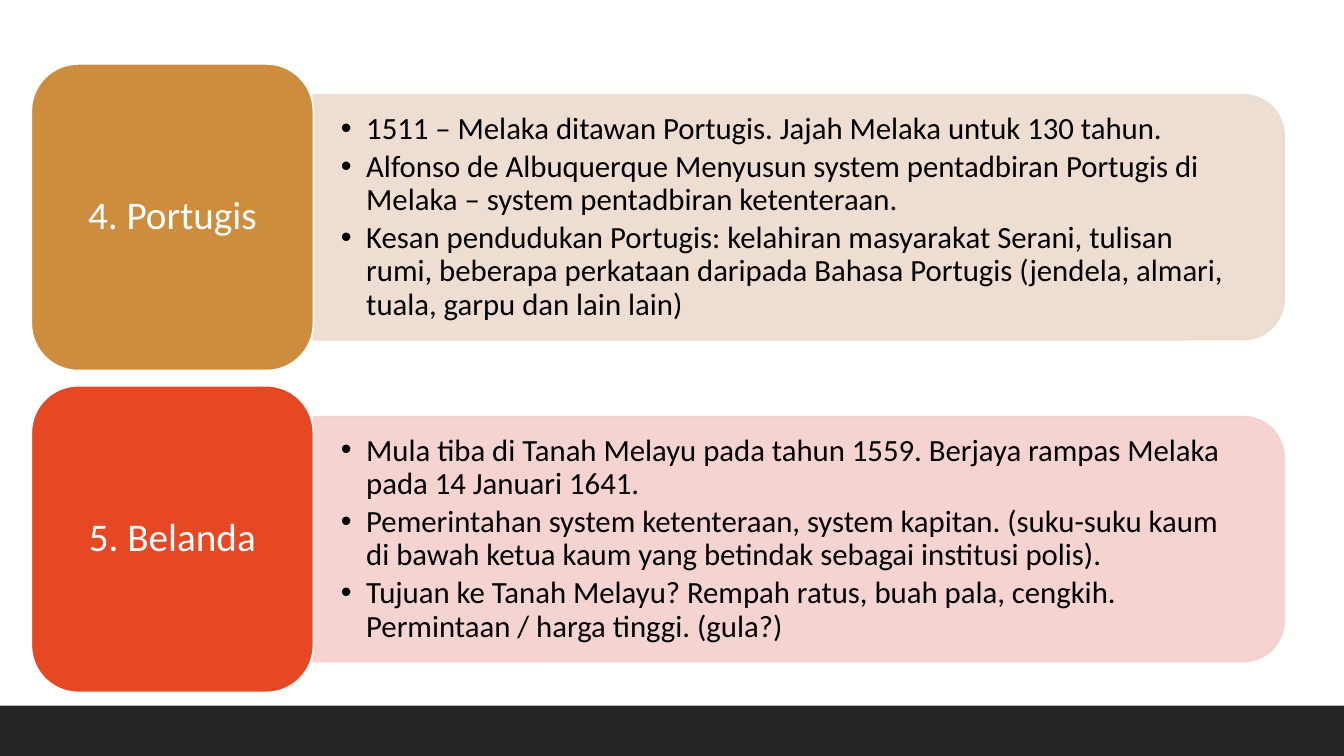
from dataclasses import dataclass

import pptx
import pptx.dml.color
import pptx.enum.shapes
import pptx.enum.text
import pptx.oxml
import pptx.oxml.ns
import pptx.util
from lxml import etree

Cm = pptx.util.Cm
Pt = pptx.util.Pt
RGBColor = pptx.dml.color.RGBColor
MSO_SHAPE = pptx.enum.shapes.MSO_SHAPE
MSO_ANCHOR = pptx.enum.text.MSO_ANCHOR
PP_ALIGN = pptx.enum.text.PP_ALIGN
qn = pptx.oxml.ns.qn

WHITE = RGBColor(0xFF, 0xFF, 0xFF)
BLACK = RGBColor(0x00, 0x00, 0x00)
CHARCOAL = RGBColor(0x26, 0x26, 0x26)
OCHRE = RGBColor(0xCE, 0x8D, 0x3E)
SAND = RGBColor(0xED, 0xDB, 0xCE)
RED = RGBColor(0xE6, 0x48, 0x23)
PINK = RGBColor(0xF5, 0xCF, 0xCD)

FONT = "Calibri"
SLIDE_W, SLIDE_H = Cm(33.87), Cm(19.05)
FOOTER_H = Cm(1.27)
CARD_LEFT, CARD_TOP = Cm(0.79), Cm(1.61)
CARD_W, CARD_H = Cm(7.11), Cm(7.73)
PANEL_W, PANEL_H = Cm(24.46), Cm(6.17)
NOTES_W, NOTES_H = Cm(24.16), Cm(5.56)
ROW_PITCH = Cm(8.11)
BULLET_INDENT = Cm(0.64)


@dataclass(frozen=True)
class Power:
    label: str
    color: RGBColor
    tint: RGBColor
    notes: tuple[str, ...]


POWERS = (
    Power("4. Portugis", OCHRE, SAND, (
        "1511 – Melaka ditawan Portugis. Jajah Melaka untuk 130 tahun.",
        "Alfonso de Albuquerque Menyusun system pentadbiran Portugis di Melaka – "
        "system pentadbiran ketenteraan.",
        "Kesan pendudukan Portugis: kelahiran masyarakat Serani, tulisan rumi, "
        "beberapa perkataan daripada Bahasa Portugis (jendela, almari, tuala, "
        "garpu dan lain lain)",
    )),
    Power("5. Belanda", RED, PINK, (
        "Mula tiba di Tanah Melayu pada tahun 1559. Berjaya rampas Melaka pada "
        "14 Januari 1641.",
        "Pemerintahan system ketenteraan, system kapitan. (suku-suku kaum di bawah "
        "ketua kaum yang betindak sebagai institusi polis).",
        "Tujuan ke Tanah Melayu? Rempah ratus, buah pala, cengkih. Permintaan / "
        "harga tinggi. (gula?)",
    )),
)


def add_block(slide, kind, left: int, top: int, width: int, height: int,
              fill: RGBColor, line: RGBColor | None = None):
    sp = slide.shapes.add_shape(kind, left, top, width, height)
    sp.shadow.inherit = False
    sp.fill.solid()
    sp.fill.fore_color.rgb = fill
    if line is None:
        sp.line.fill.background()
    else:
        sp.line.color.rgb = line
        sp.line.width = Pt(1.25)
    return sp


def set_margins(tf, horizontal: int, vertical: int) -> None:
    tf.margin_left = tf.margin_right = horizontal
    tf.margin_top = tf.margin_bottom = vertical
    tf.vertical_anchor = MSO_ANCHOR.MIDDLE
    tf.word_wrap = True


def format_paragraph(p, size: int, color: RGBColor) -> None:
    p.line_spacing = 0.9
    for r in p.runs:
        r.font.name = FONT
        r.font.size = Pt(size)
        r.font.color.rgb = color


def add_bullet(p) -> None:
    pPr = p._p.get_or_add_pPr()
    pPr.set("marL", str(BULLET_INDENT))
    pPr.set("indent", str(-BULLET_INDENT))
    etree.SubElement(pPr, qn("a:buFont")).set("typeface", "Arial")
    etree.SubElement(pPr, qn("a:buChar")).set("char", "•")


def add_panel(slide, left: int, middle: int, tint: RGBColor) -> None:
    center = left + PANEL_W // 2
    sp = add_block(slide, MSO_SHAPE.ROUND_2_SAME_RECTANGLE,
                   center - PANEL_H // 2, middle - PANEL_W // 2,
                   PANEL_H, PANEL_W, tint, tint)
    sp.rotation = 90
    for clr in sp._element.spPr.iter(qn("a:srgbClr")):
        etree.SubElement(clr, qn("a:alpha")).set("val", "90000")


def add_notes(slide, left: int, middle: int, notes: tuple[str, ...]) -> None:
    tf = slide.shapes.add_textbox(left, middle - NOTES_H // 2, NOTES_W, NOTES_H).text_frame
    set_margins(tf, Cm(0.69), Cm(0.35))
    tf.text = "\n".join(notes)
    for p in tf.paragraphs:
        p.space_after = Pt(3.5)
        format_paragraph(p, 22, BLACK)
        add_bullet(p)


def add_card(slide, top: int, power: Power) -> None:
    sp = add_block(slide, MSO_SHAPE.ROUNDED_RECTANGLE, CARD_LEFT, top,
                   CARD_W, CARD_H, power.color, WHITE)
    tf = sp.text_frame
    set_margins(tf, Cm(0.3), Cm(0.15))
    tf.text = power.label
    p = tf.paragraphs[0]
    p.alignment = PP_ALIGN.CENTER
    format_paragraph(p, 28, WHITE)


def add_power(slide, top: int, power: Power) -> None:
    left, middle = CARD_LEFT + CARD_W, top + CARD_H // 2
    add_panel(slide, left, middle, power.tint)
    add_notes(slide, left, middle, power.notes)
    add_card(slide, top, power)


def main() -> None:
    prs = pptx.Presentation()
    prs.slide_width, prs.slide_height = SLIDE_W, SLIDE_H
    slide = prs.slides.add_slide(prs.slide_layouts[6])
    add_block(slide, MSO_SHAPE.RECTANGLE, 0, SLIDE_H - FOOTER_H,
              SLIDE_W, FOOTER_H, CHARCOAL)
    for row, power in enumerate(POWERS):
        add_power(slide, CARD_TOP + row * ROW_PITCH, power)
    prs.save("out.pptx")


if __name__ == "__main__":
    main()
